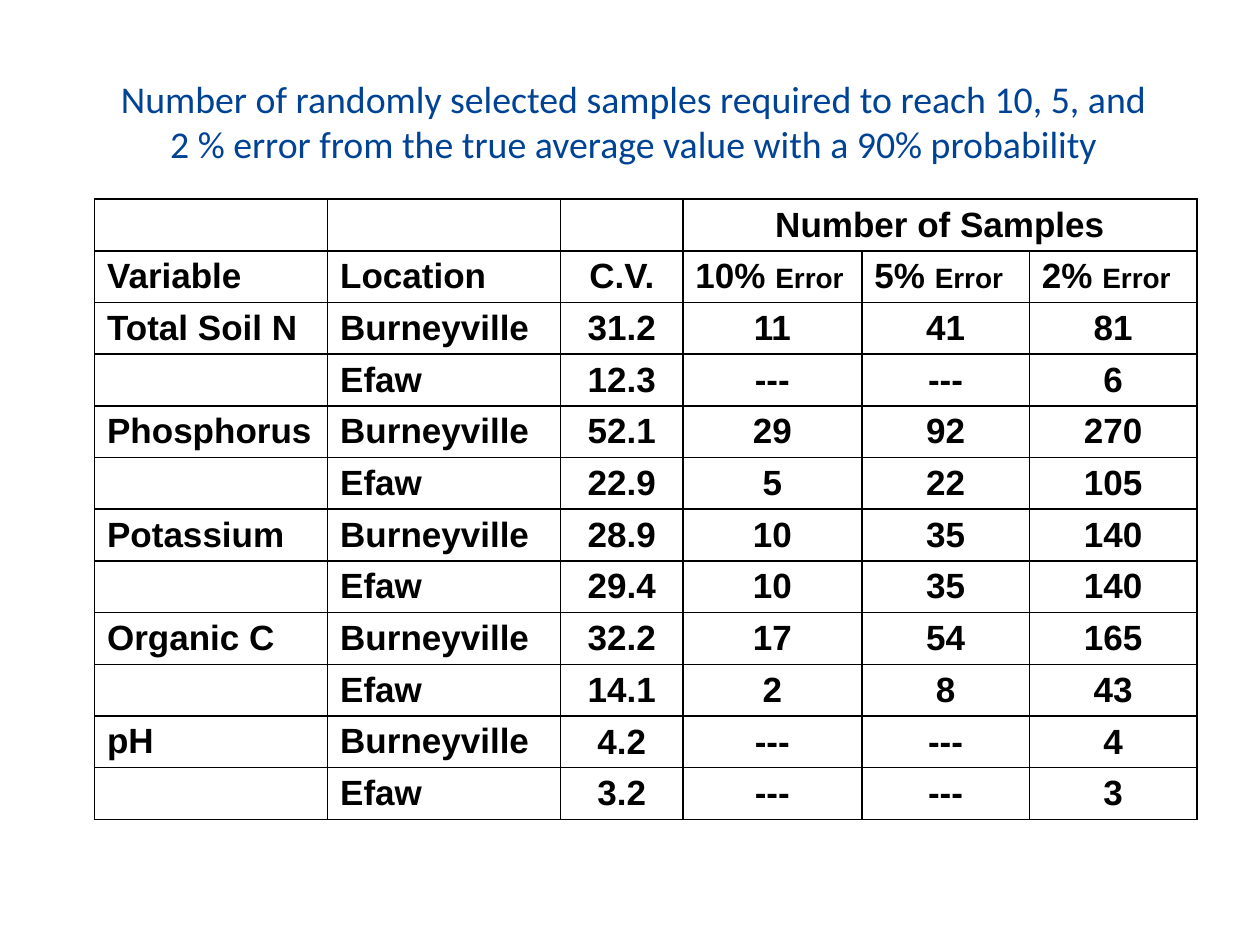
from pptx import Presentation
from pptx.dml.color import RGBColor
from pptx.enum import text
from pptx.oxml import parse_xml
from pptx.oxml.ns import nsdecls
from pptx.util import Inches, Pt

COLORS = {"title": "004395", "ink": "000000"}
COLUMN_WIDTHS = [1.85, 1.85, 0.97, 1.42, 1.33, 1.33]
ROW_HEIGHT = 0.39
ROWS = [
    ["", "", "", "Number of Samples", "", ""],
    ["Variable", "Location", "C.V.", "10% Error", "5% Error", "2% Error"],
    ["Total Soil N", "Burneyville", "31.2", "11", "41", "81"],
    ["", "Efaw", "12.3", "---", "---", "6"],
    ["Phosphorus", "Burneyville", "52.1", "29", "92", "270"],
    ["", "Efaw", "22.9", "5", "22", "105"],
    ["Potassium", "Burneyville", "28.9", "10", "35", "140"],
    ["", "Efaw", "29.4", "10", "35", "140"],
    ["Organic C", "Burneyville", "32.2", "17", "54", "165"],
    ["", "Efaw", "14.1", "2", "8", "43"],
    ["pH", "Burneyville", "4.2", "---", "---", "4"],
    ["", "Efaw", "3.2", "---", "---", "3"],
]


def style_font(font, name, size, color, bold=False):
    font.name = name
    font.size = Pt(size)
    font.bold = bold
    font.color.rgb = RGBColor.from_string(COLORS[color])


def add_borders(cell):
    properties = cell._tc.get_or_add_tcPr()
    for position, side in enumerate(["lnL", "lnR", "lnT", "lnB"]):
        properties.insert(position, parse_xml(
            f'<a:{side} {nsdecls("a")} w="{Pt(1)}"><a:solidFill>'
            f'<a:srgbClr val="{COLORS["ink"]}"/></a:solidFill></a:{side}>'))


presentation = Presentation()
presentation.slide_width = Inches(10)
presentation.slide_height = Inches(7.5)
slide = presentation.slides.add_slide(presentation.slide_layouts[5])

title = slide.shapes.title
title.left, title.top = Inches(0.75), Inches(0.42)
title.width, title.height = Inches(8.5), Inches(1.08)
title.text_frame.text = ("Number of randomly selected samples required to reach 10, 5, and "
                         "2 % error from the true average value with a 90% probability")
title.text_frame.auto_size = text.MSO_AUTO_SIZE.NONE
title.text_frame.vertical_anchor = text.MSO_ANCHOR.MIDDLE
paragraph = title.text_frame.paragraphs[0]
paragraph.alignment = text.PP_ALIGN.CENTER
paragraph._p.get_or_add_pPr().set("marL", str(Inches(0.06)))
style_font(paragraph.font, "Calibri", 21.6, "title")

table = slide.shapes.add_table(
    len(ROWS), len(COLUMN_WIDTHS), Inches(0.75), Inches(1.58),
    Inches(sum(COLUMN_WIDTHS)), Inches(ROW_HEIGHT * len(ROWS))).table
table.first_row = False
table.horz_banding = False
for column, width in zip(table.columns, COLUMN_WIDTHS):
    column.width = Inches(width)
for row in table.rows:
    row.height = Inches(ROW_HEIGHT)
table.cell(0, 3).merge(table.cell(0, 5))

for row_index, values in enumerate(ROWS):
    for column_index, value in enumerate(values):
        cell = table.cell(row_index, column_index)
        cell.fill.background()
        add_borders(cell)
        if not value:
            continue
        paragraph = cell.text_frame.paragraphs[0]
        is_error_heading = value.endswith(" Error")
        if column_index >= 2 and not is_error_heading:
            paragraph.alignment = text.PP_ALIGN.CENTER
            if row_index > 0:
                cell.vertical_anchor = text.MSO_ANCHOR.MIDDLE
        if is_error_heading:
            percent = value.removesuffix("Error")
            for part, size in [(percent, 20), ("Error", 16)]:
                run = paragraph.add_run()
                run.text = part
                style_font(run.font, "Arial", size, "ink", bold=True)
        else:
            paragraph.add_run().text = value
            style_font(paragraph.font, "Arial", 20, "ink", bold=True)

presentation.save("out.pptx")
